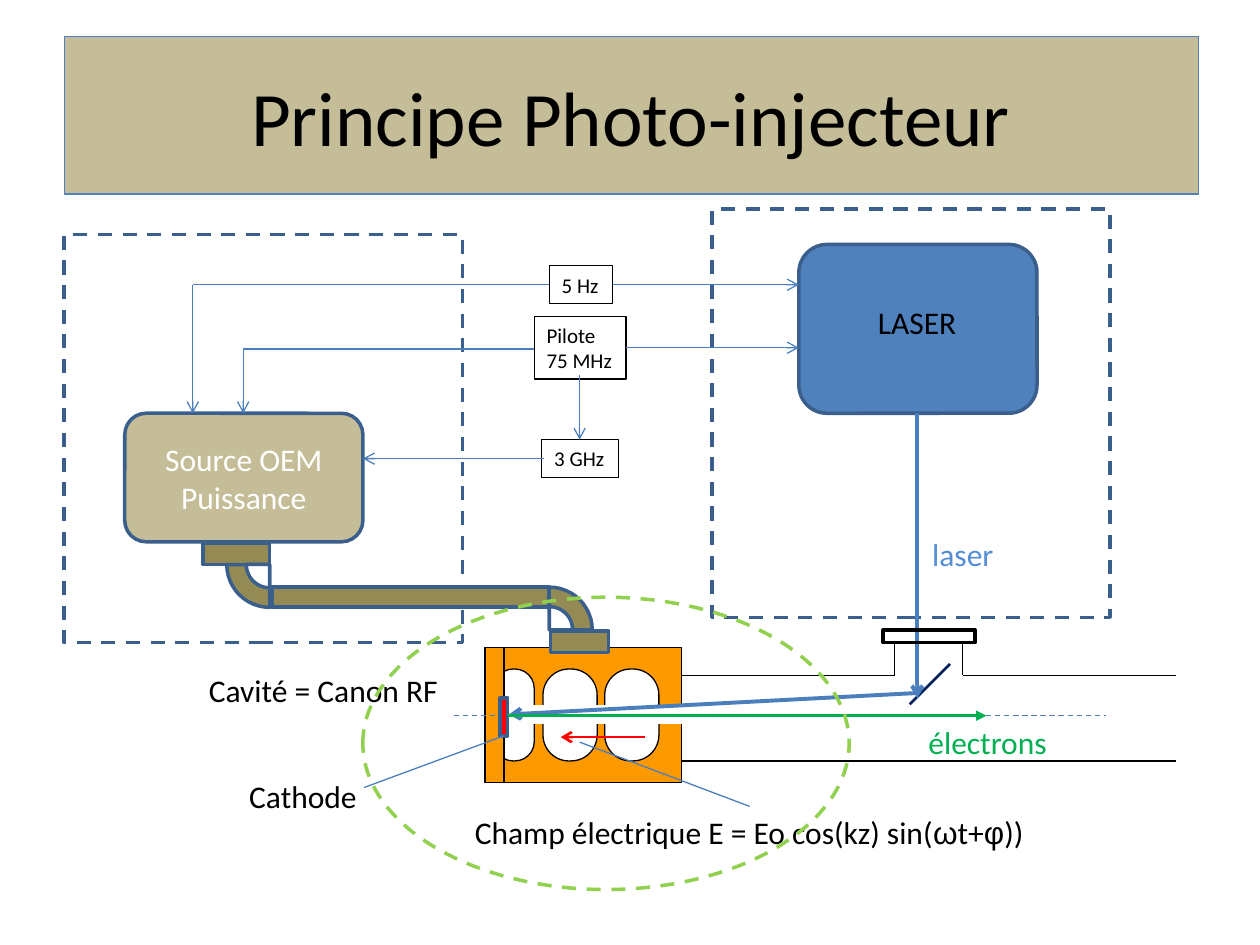
from dataclasses import dataclass
from typing import Any

from lxml import etree
from pptx import Presentation
from pptx.dml.color import RGBColor
from pptx.enum.dml import MSO_LINE
from pptx.enum.shapes import MSO_CONNECTOR, MSO_SHAPE
from pptx.enum.text import MSO_ANCHOR, MSO_AUTO_SIZE, PP_ALIGN
from pptx.oxml.ns import qn
from pptx.util import Inches, Pt

RECT = MSO_SHAPE.RECTANGLE
ROUNDED = MSO_SHAPE.ROUNDED_RECTANGLE
PIE = MSO_SHAPE.PIE
OVAL = MSO_SHAPE.OVAL
STRAIGHT = MSO_CONNECTOR.STRAIGHT
DASH = MSO_LINE.DASH
CENTER = PP_ALIGN.CENTER
MIDDLE = MSO_ANCHOR.MIDDLE
FIT_SHAPE = MSO_AUTO_SIZE.SHAPE_TO_FIT_TEXT

BLACK, WHITE, RED, GREEN = "000000", "FFFFFF", "FF0000", "00B050"
BLUE, LINK, OUTLINE = "4F81BD", "4B7EBC", "3A5F8C"
SAND, KHAKI, ORANGE = "C4BD97", "948A54", "FF9900"


def rgb(value):
    """Turn a hex string into a colour."""
    return RGBColor.from_string(value)


def style_line(line, color, weight, dashed=False):
    """Set the colour, weight and dash of a line."""
    line.color.rgb = rgb(color)
    line.width = Pt(weight)
    if dashed:
        line.dash_style = DASH


def style_text(frame, size, color, align=None):
    """Format every run of a text frame."""
    for paragraph in frame.paragraphs:
        paragraph.alignment = align
        for run in paragraph.runs:
            run.font.name = "Calibri"
            run.font.size = Pt(size)
            run.font.color.rgb = rgb(color)


@dataclass
class Region:
    """A box on the slide in inches; its parts are placed from its top left."""
    slide: Any
    left: float
    top: float
    width: float
    height: float

    def place(self, x, y):
        """Return the slide position of a point in the region."""
        return Inches(self.left + x), Inches(self.top + y)

    def shape(self, kind, x, y, w, h, fill=None, line=OUTLINE, weight=2, dashed=False):
        """Add a preset shape without shadow."""
        part = self.slide.shapes.add_shape(kind, *self.place(x, y), Inches(w), Inches(h))
        part.shadow.inherit = False
        if fill:
            part.fill.solid()
            part.fill.fore_color.rgb = rgb(fill)
        else:
            part.fill.background()
        style_line(part.line, line, weight, dashed)
        return part

    def line(self, x1, y1, x2, y2, color=LINK, weight=0.75, arrow=None, dashed=False, end="tailEnd"):
        """Add a straight line, with an arrowhead if one is named."""
        link = self.slide.shapes.add_connector(STRAIGHT, *self.place(x1, y1), *self.place(x2, y2))
        style_line(link.line, color, weight, dashed)
        if arrow:
            etree.SubElement(link.line._get_or_add_ln(), qn("a:" + end), type=arrow)
        etree.SubElement(link._element.spPr, qn("a:effectLst"))

    def label(self, x, y, w, text, color=BLACK):
        """Add a one-line text."""
        box = self.slide.shapes.add_textbox(*self.place(x, y), Inches(w), Inches(0.4))
        box.text_frame.text = text
        box.text_frame.word_wrap = False
        box.text_frame.auto_size = FIT_SHAPE
        style_text(box.text_frame, 18, color)
        return box

    def signal(self, x, y, w, h, text, fill=None):
        """Add a framed frequency."""
        frame = self.shape(RECT, x, y, w, h, fill, BLACK, 0.75).text_frame
        frame.text = text
        frame.word_wrap = False
        frame.auto_size = FIT_SHAPE
        style_text(frame, 12, BLACK, PP_ALIGN.LEFT)

    def border(self, kind=RECT, color=OUTLINE):
        """Outline the whole region with dashes."""
        self.shape(kind, 0, 0, self.width, self.height, line=color, dashed=True)


def add_title(region):
    """Format the title placeholder as a filled banner."""
    title = region.slide.shapes.title
    title.left, title.top = region.place(0, 0)
    title.width, title.height = Inches(region.width), Inches(region.height)
    title.fill.solid()
    title.fill.fore_color.rgb = rgb(SAND)
    style_line(title.line, BLUE, 0.75)
    title.text_frame.text = "Principe Photo-injecteur"
    title.text_frame.vertical_anchor = MIDDLE
    style_text(title.text_frame, 44, BLACK, CENTER)


def add_power_source(region):
    """Draw the microwave power source."""
    source = region.shape(ROUNDED, 0.48, 1.42, 1.89, 1.02, SAND)
    source.text_frame.text = "Source OEM Puissance"
    source.text_frame.vertical_anchor = MIDDLE
    style_text(source.text_frame, 18, WHITE, CENTER)
    region.border()


def add_laser(region):
    """Draw the laser and its room."""
    region.shape(ROUNDED, 0.69, 0.28, 1.89, 1.34, BLUE)
    region.label(1.22, 0.7, 0.83, "LASER")
    region.label(1.65, 2.54, 0.69, "laser", "558ED5")
    region.border()


def add_synchronisation(region):
    """Draw the frequencies that drive the source and the laser."""
    right = region.width
    region.signal(2.71, 0.4, 0.73, 0.5, "Pilote\n75 MHz")
    region.line(0.4, 0.66, 0.4, 1.17, arrow="arrow")
    region.line(0.4, 0.66, 2.71, 0.66)
    region.line(3.44, 0.65, right, 0.65, arrow="arrow")
    region.signal(2.77, 1.38, 0.61, 0.3, "3 GHz")
    region.line(3.07, 0.87, 3.07, 1.38, arrow="arrow")
    region.line(1.35, 1.53, 2.79, 1.53, arrow="arrow", end="headEnd")
    region.line(0, 0.15, 0, 1.17, arrow="arrow")
    region.line(0, 0.15, right, 0.15, arrow="arrow")
    region.signal(2.83, 0, 0.5, 0.3, "5 Hz", WHITE)


def add_gun(region):
    """Draw the RF cavity with its cells, back plate and beam hole."""
    region.shape(RECT, 0.15, 0, 1.41, region.height, ORANGE, BLACK, 0.75)
    for x, width in ((0.46, 0.43), (0.95, 0.43), (0.07, 0.32)):
        cell = region.shape(ROUNDED, x, 0.17, width, 0.73, WHITE, BLACK, 0.75)
        cell.adjustments[0] = 0.48
    region.shape(RECT, 0, 0, 0.15, region.height, ORANGE, BLACK, 0.75)
    region.shape(RECT, 0.22, 0.46, 1.48, 0.14, WHITE, WHITE, 0.75)


def add_waveguide(region):
    """Draw the waveguide from the source to the cavity."""
    region.shape(RECT, 2.76, 0.7, 0.46, 0.17, KHAKI)
    region.shape(RECT, 0, 0, 0.53, 0.17, KHAKI)
    region.shape(RECT, 0.55, 0.35, 2.2, 0.16, KHAKI)
    for center_x, center_y, rotation in ((0.53, 0.17, 270), (2.75, 0.69, 90)):
        for size, fill in ((0.68, KHAKI), (0.37, WHITE)):
            bend = region.shape(PIE, center_x - size / 2, center_y - size / 2, size, size, fill)
            bend.adjustments[0], bend.adjustments[1] = 107.84, 162
            bend.rotation = rotation


def add_beams(region):
    """Draw the cathode, mirror, laser path, field and electrons."""
    region.line(0, 2.4, 5.18, 2.4, dashed=True)
    region.shape(RECT, 0.37, 2.26, 0.06, 0.3, RED)
    region.line(0.85, 2.57, 1.52, 2.57, RED, 1.5, "arrow", end="headEnd")
    region.line(3.62, 2.31, 3.94, 1.99, "002060", 1.5)
    region.line(3.68, 0, 3.68, 2.26, weight=2.25, arrow="arrow")
    region.line(3.68, 2.22, 0.44, 2.39, weight=2.25, arrow="arrow")
    region.line(0.43, 2.4, 4.23, 2.4, GREEN, 1.5, "triangle")
    region.label(3.67, 2.41, 1.15, "électrons", GREEN)


def add_beam_pipe(region):
    """Draw the beam pipe with its laser window."""
    right = region.width
    region.line(0, 1.04, right, 1.04, BLACK)
    for start, end in ((0, 1.69), (2.23, right)):
        region.line(start, 0.36, end, 0.36, BLACK)
    for x in (1.69, 2.23):
        region.line(x, 0.1, x, 0.36, BLACK)
    region.shape(RECT, 1.6, 0, 0.73, 0.1, line=BLACK)


def add_captions(region):
    """Name the cavity, cathode and electric field."""
    region.label(0, 0, 2.04, "Cavité = Canon RF")
    region.label(0.32, 0.84, 1.07, "Cathode")
    field = region.label(2.11, 1.12, 4.56, "")
    formula = field.text_frame.paragraphs[0]
    for text in ("Champ électrique E = Eo cos(kz) sin(", "ω", "t+", "φ", "))"):
        formula.add_run().text = text
    style_text(field.text_frame, 18, BLACK)
    for run in formula.runs[1::2]:
        run.font.name = "Arial"
    region.line(1.33, 0.97, 2.44, 0.56)
    region.line(4.39, 1.12, 3.04, 0.61)


def main():
    """Build the slide and save it."""
    deck = Presentation()
    deck.slide_width, deck.slide_height = Inches(10), Inches(7.5)
    slide = deck.slides.add_slide(deck.slide_layouts[5])
    add_title(Region(slide, 0.51, 0.29, 9, 1.25))
    add_power_source(Region(slide, 0.51, 1.86, 3.16, 3.24))
    add_laser(Region(slide, 5.65, 1.66, 3.16, 3.24))
    add_gun(Region(slide, 3.85, 5.14, 1.56, 1.07))
    add_synchronisation(Region(slide, 1.53, 2.11, 4.81, 1.68))
    add_waveguide(Region(slide, 1.61, 4.31, 3.22, 0.87))
    add_beams(Region(slide, 3.6, 3.28, 5.18, 2.81))
    add_captions(Region(slide, 1.56, 5.28, 6.67, 1.52))
    add_beam_pipe(Region(slide, 5.41, 5, 3.92, 1.04))
    Region(slide, 2.88, 4.74, 3.86, 2.32).border(OVAL, "92D050")
    deck.save("out.pptx")


if __name__ == "__main__":
    main()
